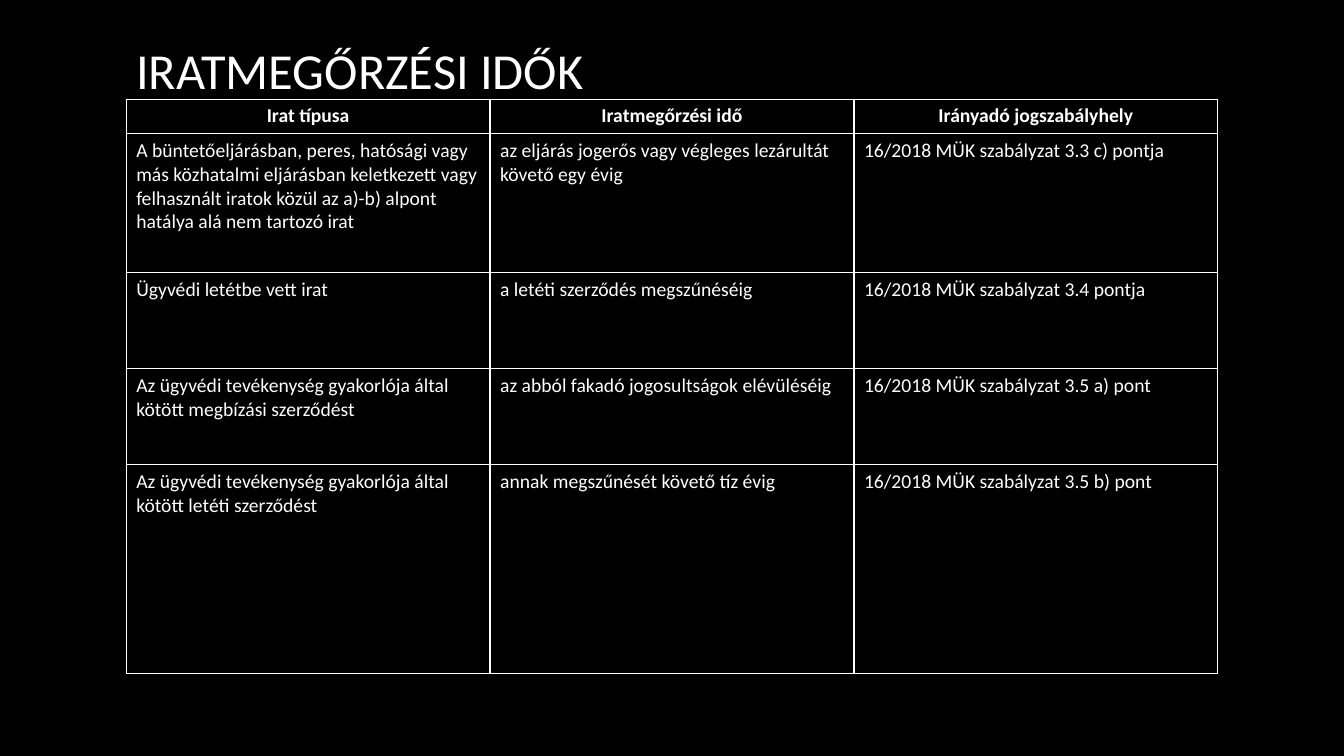
from lxml import etree
from pptx import Presentation
from pptx.dml.color import RGBColor
from pptx.enum.text import MSO_ANCHOR, PP_ALIGN
from pptx.oxml.ns import qn
from pptx.util import Cm, Pt

MIDDLE = MSO_ANCHOR.MIDDLE
LEFT, CENTER = PP_ALIGN.LEFT, PP_ALIGN.CENTER

theme = {
    "back": RGBColor(0, 0, 0),
    "ink": RGBColor(255, 255, 255),
    "font": "Calibri",
    "title": Pt(36),
    "body": Pt(14),
    "line": Pt(1),
}

rows = [
    ("Irat típusa", "Iratmegőrzési idő", "Irányadó jogszabályhely"),
    ("A büntetőeljárásban, peres, hatósági vagy más közhatalmi eljárásban "
     "keletkezett vagy felhasznált iratok közül az a)-b) alpont hatálya alá "
     "nem tartozó irat",
     "az eljárás jogerős vagy végleges lezárultát követő egy évig",
     "16/2018 MÜK szabályzat 3.3 c) pontja"),
    ("Ügyvédi letétbe vett irat",
     "a letéti szerződés megszűnéséig",
     "16/2018 MÜK szabályzat 3.4 pontja"),
    ("Az ügyvédi tevékenység gyakorlója által kötött megbízási szerződést",
     "az abból fakadó jogosultságok elévüléséig",
     "16/2018 MÜK szabályzat 3.5 a) pont"),
    ("Az ügyvédi tevékenység gyakorlója által kötött letéti szerződést",
     "annak megszűnését követő tíz évig",
     "16/2018 MÜK szabályzat 3.5 b) pont"),
]
heights = [0.87, 3.5, 2.42, 2.42, 5.26]
left, width = Cm(3.18), Cm(27.51)


def write(frame, text, size, bold, align):
    para = frame.paragraphs[0]
    para.alignment = align
    run = para.add_run()
    run.text = text
    form = {"name": theme["font"], "size": size, "bold": bold}
    for key, value in form.items():
        setattr(run.font, key, value)
    run.font.color.rgb = theme["ink"]
    return para


def frame_cell(cell):
    props = cell._tc.get_or_add_tcPr()
    for side in ("lnL", "lnR", "lnT", "lnB"):
        line = etree.SubElement(props, qn(f"a:{side}"), w=str(theme["line"]))
        fill = etree.SubElement(line, qn("a:solidFill"))
        etree.SubElement(fill, qn("a:srgbClr"), val=str(theme["ink"]))


deck = Presentation()
deck.slide_width, deck.slide_height = Cm(33.87), Cm(19.05)
slide = deck.slides.add_slide(deck.slide_layouts[6])
slide.background.fill.solid()
slide.background.fill.fore_color.rgb = theme["back"]

title = slide.shapes.add_textbox(left, Cm(0.74), width, Cm(2.23)).text_frame
title.word_wrap = True
title.vertical_anchor = MIDDLE
para = write(title, "IRATMEGŐRZÉSI IDŐK", theme["title"], False, LEFT)
para.line_spacing = 0.9

table = slide.shapes.add_table(
    len(rows), len(rows[0]), left, Cm(2.5), width, Cm(sum(heights))).table
for row, height in zip(table.rows, heights):
    row.height = Cm(height)

for r, texts in enumerate(rows):
    head = r == 0
    for c, text in enumerate(texts):
        cell = table.cell(r, c)
        frame_cell(cell)
        cell.fill.solid()
        cell.fill.fore_color.rgb = theme["back"]
        write(cell.text_frame, text, theme["body"], head,
              CENTER if head else LEFT)

deck.save("out.pptx")
